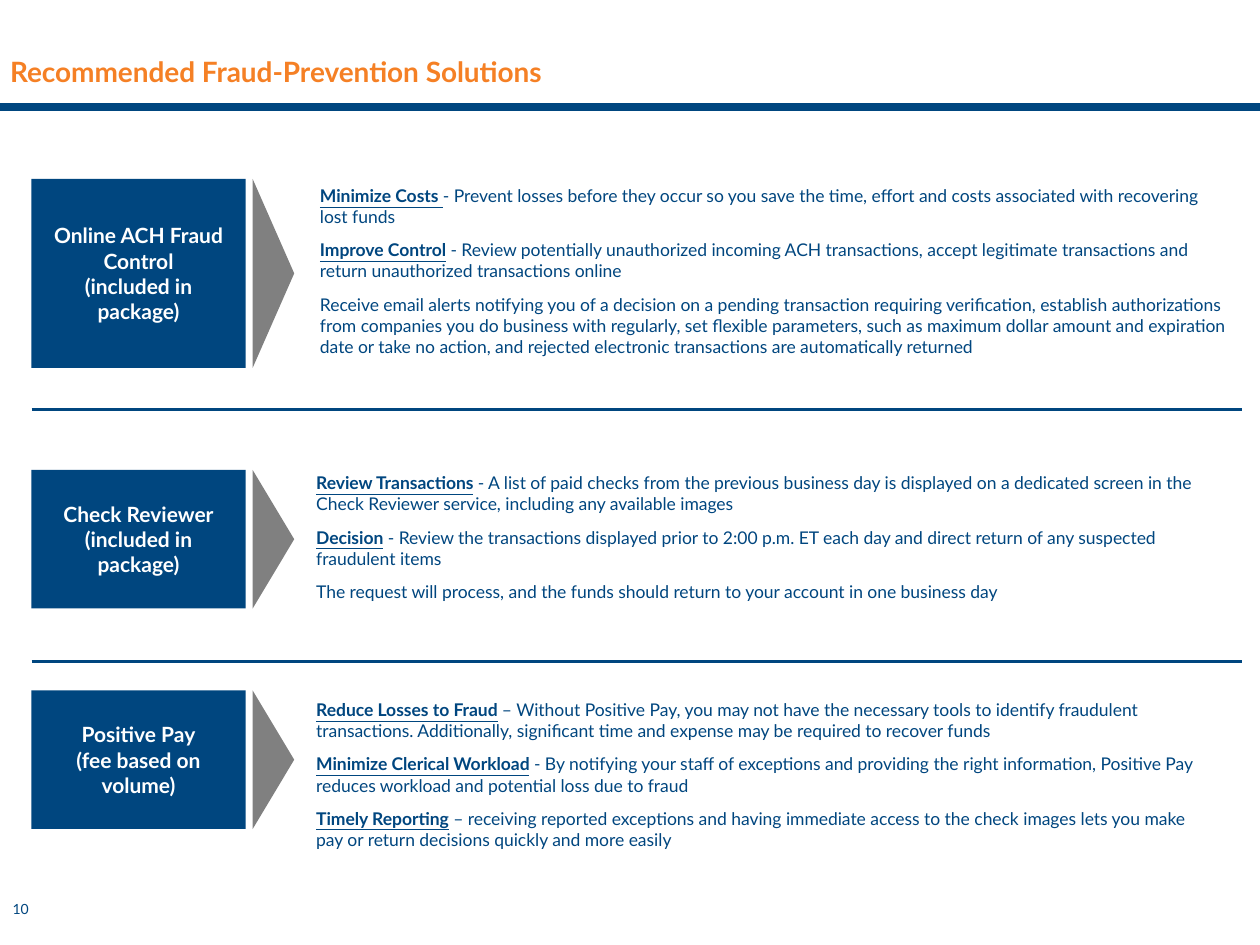
from pptx import Presentation
from pptx.dml.color import RGBColor
from pptx.enum.shapes import MSO_CONNECTOR as Conn, MSO_SHAPE as Shape
from pptx.enum.text import MSO_ANCHOR as Anchor, PP_ALIGN as Align
from pptx.util import Inches, Pt
from lxml import etree

NAVY, GRAY, ORANGE, WHITE = "00467F", "808080", "F58025", "FFFFFF"
DRAW = "{http://schemas.openxmlformats.org/drawingml/2006/main}"

ROWS = [
    (1.42, 1.5, 2.53, 1.42, 0.01, 1.5,
     ["Online ACH Fraud Control", "(included in package)"],
     [("Minimize Costs ", "- Prevent losses before they occur so you save the time, effort and costs "
       "associated with recovering lost funds"),
      ("Improve Control", " - Review potentially unauthorized incoming ACH transactions, accept "
       "legitimate transactions and return unauthorized transactions online"),
      ("", "Receive email alerts notifying you of a decision on a pending transaction requiring "
       "verification, establish authorizations from companies you do business with regularly, set "
       "flexible parameters, such as maximum dollar amount and expiration date or take no action, "
       "and rejected electronic transactions are automatically returned")]),
    (3.73, 1.1, 2.45, 3.7, 0.06, 1.2,
     ["Check Reviewer", "(included in package)"],
     [("Review Transactions", " - A list of paid checks from the previous business day is displayed "
       "on a dedicated screen in the Check Reviewer service, including any available images"),
      ("Decision", " - Review the transactions displayed prior to 2:00 p.m. ET each day and direct "
       "return of any suspected fraudulent items"),
      ("", "The request will process, and the funds should return to your account in one "
       "business day")]),
    (5.48, 1.1, 2.45, 5.5, 0.06, 1.2,
     ["Positive Pay", "(fee based on volume)"],
     [("Reduce Losses to Fraud", " – Without Positive Pay, you may not have the necessary tools to "
       "identify fraudulent transactions. Additionally, significant time and expense may be "
       "required to recover funds"),
      ("Minimize Clerical Workload", " - By notifying your staff of exceptions and providing the "
       "right information, Positive Pay reduces workload and potential loss due to fraud"),
      ("Timely Reporting", " – receiving reported exceptions and having immediate access to the "
       "check images lets you make pay or return decisions quickly and more easily")]),
]


def color(code):
    return RGBColor.from_string(code)


def write(frame, paras, size=10, tint=NAVY, bold=False, align=Align.LEFT,
          anchor=Anchor.TOP, pad=(0.1, 0.05, 0.1, 0.05), before=0, after=0, wrap=True):
    frame.word_wrap = wrap
    frame.vertical_anchor = anchor
    (frame.margin_left, frame.margin_top,
     frame.margin_right, frame.margin_bottom) = map(Inches, pad)
    for i, (lead, rest) in enumerate(paras):
        para = frame.add_paragraph() if i else frame.paragraphs[0]
        para.alignment = align
        para.space_before = Pt(before if i else 0)
        para.space_after = Pt(after)
        for text, strong in ((lead, True), (rest, False)):
            if text:
                run = para.add_run()
                run.text = text
                font = run.font
                font.name, font.size = "Lato", Pt(size)
                font.bold = bold or strong
                font.underline = strong
                font.color.rgb = color(tint)


def block(shapes, kind, x, y, w, h, fill):
    shape = shapes.add_shape(kind, *map(Inches, (x, y, w, h)))
    shape.shadow.inherit = False
    shape.fill.solid()
    shape.fill.fore_color.rgb = color(fill)
    shape.line.fill.background()
    return shape


def rule(shapes, left, right, y, width):
    line = shapes.add_connector(Conn.STRAIGHT, *map(Inches, (left, y, right, y)))
    line.line.color.rgb = color(NAVY)
    line.line.width = Pt(width)
    etree.SubElement(line.element.spPr, DRAW + "effectLst")


def row(shapes, top, high, x, y, inset, tall, label, items):
    group = shapes.add_group_shape().shapes
    box = block(group, Shape.RECTANGLE, 0.25, top, 1.7, high, NAVY)
    write(box.text_frame, [("", text) for text in label], size=12, tint=WHITE,
          bold=True, align=Align.CENTER, anchor=Anchor.MIDDLE)
    note = group.add_textbox(*map(Inches, (x, y, 7.3, tall)))
    write(note.text_frame, items, pad=(inset, 0.05, 0.1, 0.05), before=1, after=6)
    arrow = block(group, Shape.FLOWCHART_EXTRACT, 2.17 - high / 2,
                  top + high / 2 - 0.165, high, 0.33, GRAY)
    arrow.rotation = 90


def main():
    deck = Presentation()
    deck.slide_width, deck.slide_height = Inches(10), Inches(7.5)
    slide = deck.slides.add_slide(deck.slide_layouts[5])
    shapes = slide.shapes
    rule(shapes, 0, 10, 0.85, 4.5)
    title = shapes.title
    title.left, title.top, title.width, title.height = map(Inches, (0.08, 0.42, 9.14, 0.29))
    write(title.text_frame, [("", "Recommended Fraud-Prevention Solutions")], size=16,
          tint=ORANGE, bold=True, anchor=Anchor.MIDDLE, pad=(0, 0, 0, 0))
    for item in ROWS:
        row(shapes, *item)
    for y in (3.25, 5.25):
        rule(shapes, 0.25, 9.86, y, 2)
    page = shapes.add_textbox(*map(Inches, (0.1, 7.14, 0.14, 0.14)))
    write(page.text_frame, [("", "10")], size=8, anchor=Anchor.MIDDLE,
          pad=(0, 0, 0, 0), wrap=False)
    deck.save("out.pptx")


if __name__ == "__main__":
    main()
